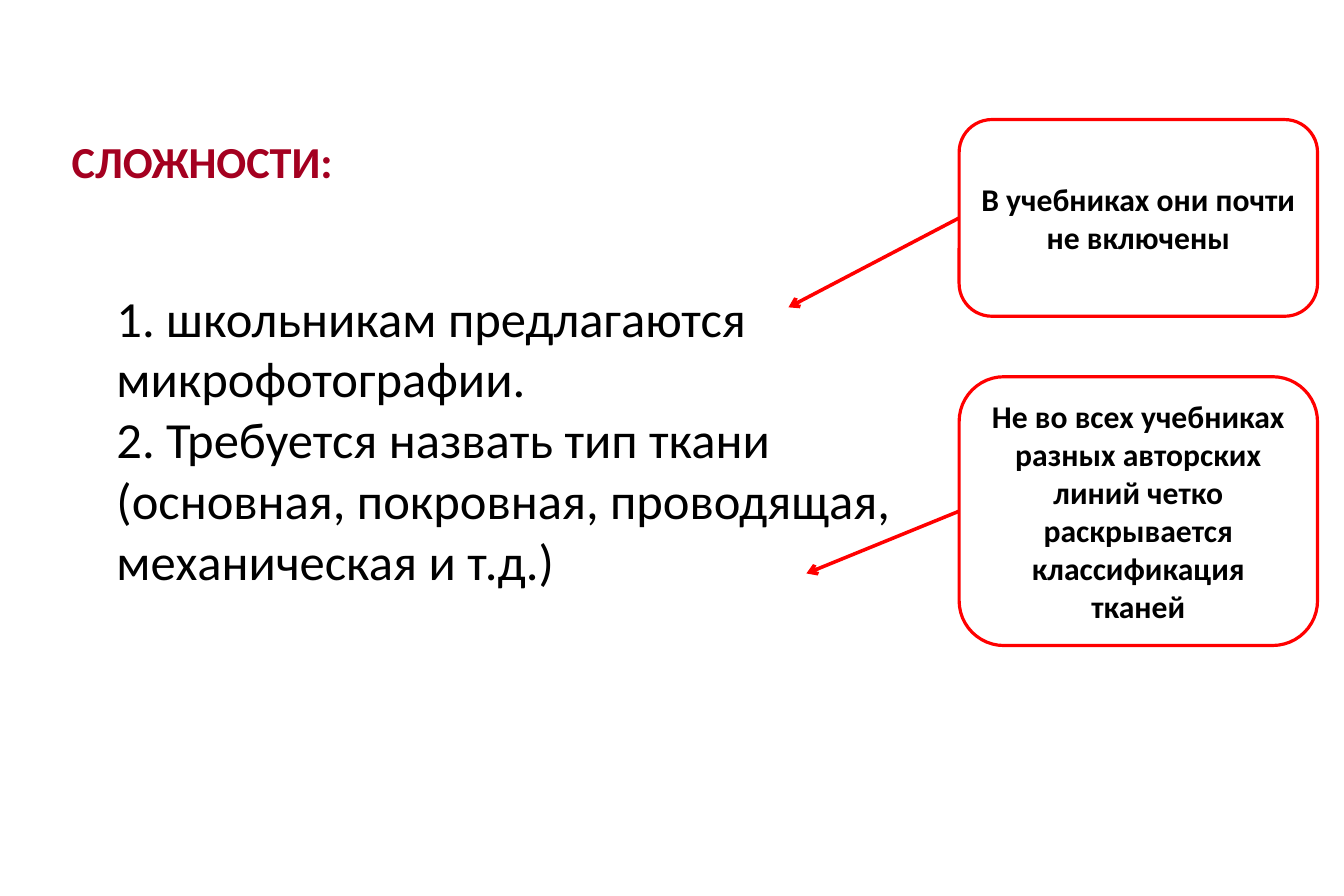
import dataclasses

import pptx
import pptx.dml.color
import pptx.enum.shapes
import pptx.enum.text
import pptx.oxml.ns
import pptx.util
from lxml import etree

Cm = pptx.util.Cm
Pt = pptx.util.Pt
RGB = pptx.dml.color.RGBColor.from_string


@dataclasses.dataclass(frozen=True)
class Theme:
    font: str = "Calibri"
    heading: str = "A40020"
    ink: str = "000000"
    paper: str = "FFFFFF"
    accent: str = "FF0000"
    heading_size: int = 28
    body_size: int = 32
    callout_size: int = 20
    outline: float = 2
    arrow: float = 2.25


THEME = Theme()

DIFFICULTIES = [
    "1. школьникам предлагаются микрофотографии.",
    "2. Требуется назвать тип ткани (основная, покровная, проводящая, механическая и т.д.)",
]

# Text, box (left, top, width, height) and arrow tip, in centimetres
CALLOUTS = [
    ("В учебниках они почти не включены",
     (21.41, 2.67, 8, 4.39), (17.6, 6.86)),
    ("Не во всех учебниках разных авторских линий четко раскрывается классификация тканей",
     (21.41, 8.41, 8, 6), (18, 12.8)),
]


def write(frame, lines, size, color, bold=False, align=None):
    frame.word_wrap = True
    font_format = {"name": THEME.font, "size": Pt(size), "bold": bold}
    for index, line in enumerate(lines):
        paragraph = frame.add_paragraph() if index else frame.paragraphs[0]
        paragraph.alignment = align
        run = paragraph.add_run()
        run.text = line
        for key, value in font_format.items():
            setattr(run.font, key, value)
        run.font.color.rgb = RGB(color)


def add_text(slide, box, lines, **style):
    """Place text flush with the edges of its box."""
    frame = slide.shapes.add_textbox(*map(Cm, box)).text_frame
    for side in ("left", "top", "right", "bottom"):
        setattr(frame, f"margin_{side}", 0)
    write(frame, lines, **style)


def add_arrow(slide, start, tip):
    arrow = slide.shapes.add_connector(
        pptx.enum.shapes.MSO_CONNECTOR.STRAIGHT, *map(Cm, start + tip))
    arrow.line.color.rgb = RGB(THEME.accent)
    arrow.line.width = Pt(THEME.arrow)
    qn = pptx.oxml.ns.qn
    etree.SubElement(arrow.line._get_or_add_ln(), qn("a:tailEnd"), type="arrow")
    etree.SubElement(arrow._element.spPr, qn("a:effectLst"))


def add_callout(slide, box, remark, tip):
    """Draw a rounded remark with an arrow from the middle of its left edge."""
    callout = slide.shapes.add_shape(
        pptx.enum.shapes.MSO_SHAPE.ROUNDED_RECTANGLE, *map(Cm, box))
    callout.shadow.inherit = False
    callout.fill.solid()
    callout.fill.fore_color.rgb = RGB(THEME.paper)
    callout.line.color.rgb = RGB(THEME.accent)
    callout.line.width = Pt(THEME.outline)
    callout.text_frame.vertical_anchor = pptx.enum.text.MSO_ANCHOR.MIDDLE
    write(callout.text_frame, [remark], THEME.callout_size, THEME.ink,
          bold=True, align=pptx.enum.text.PP_ALIGN.CENTER)
    left, top, _, height = box
    add_arrow(slide, (left, top + height / 2), tip)


def main():
    deck = pptx.Presentation()
    deck.slide_width, deck.slide_height = Cm(30), Cm(20)
    slide = deck.slides.add_slide(deck.slide_layouts[6])
    add_text(slide, (1.6, 3, 22.35, 2.4), ["СЛОЖНОСТИ:"],
             size=THEME.heading_size, color=THEME.heading, bold=True)
    add_text(slide, (2.6, 6.4, 17.8, 8.43), DIFFICULTIES,
             size=THEME.body_size, color=THEME.ink)
    for remark, box, tip in CALLOUTS:
        add_callout(slide, box, remark, tip)
    deck.save("out.pptx")


if __name__ == "__main__":
    main()
